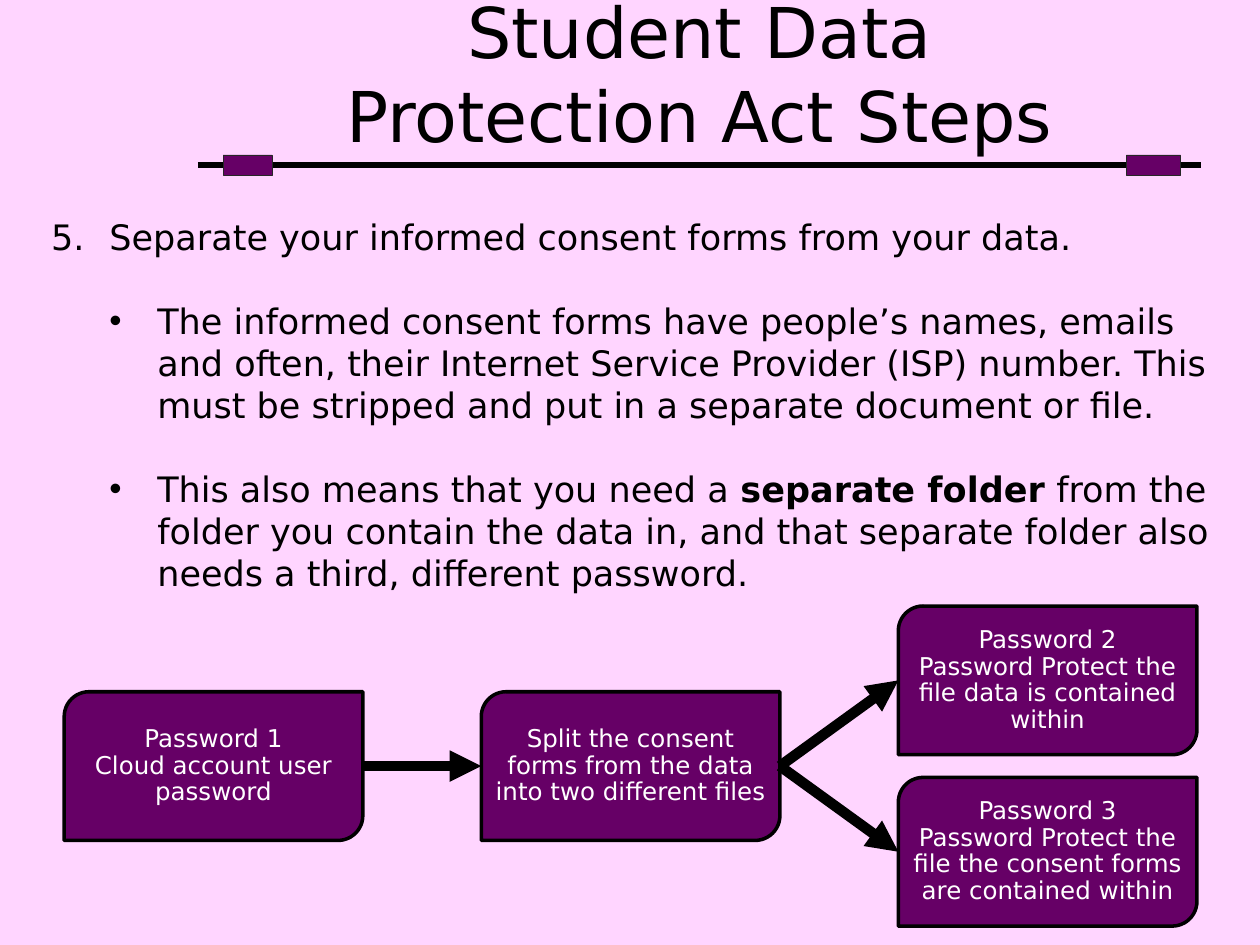
from lxml import etree
from pptx import Presentation
from pptx.dml.color import RGBColor
from pptx.enum.shapes import MSO_CONNECTOR as CONNECTOR, MSO_SHAPE as SHAPE
from pptx.enum.text import MSO_ANCHOR as ANCHOR, MSO_AUTO_SIZE as AUTO_SIZE, PP_ALIGN as ALIGN
from pptx.oxml.ns import qn
from pptx.util import Inches, Pt

PINK = RGBColor(0xFF, 0xD5, 0xFF)
PURPLE = RGBColor(0x66, 0x00, 0x66)
BLACK = RGBColor(0x00, 0x00, 0x00)
DARK_GRAY = RGBColor(0x26, 0x26, 0x26)
WHITE = RGBColor(0xFF, 0xFF, 0xFF)

BOX_WIDTH, BOX_HEIGHT = 2.37, 1.18
COLUMN_STEP = 3.31
FIRST_LEFT, MIDDLE_TOP = 0.51, 5.49
BRANCH_OFFSET = 0.68
BULLET_INDENT = 0.38

BODY = [
    (False, [("Separate your informed consent forms from your data.", False)]),
    (True, [("The informed consent forms have people’s names, emails and often, "
             "their Internet Service Provider (ISP) number. This must be stripped "
             "and put in a separate document or file.", False)]),
    (True, [("This also means that you need a ", False),
            ("separate folder", True),
            (" from the folder you contain the data in, and that separate folder "
             "also needs a third, different password.", False)]),
]

# Column, offset from the middle row, lines of text
STEPS = {
    "login": (0, 0, ["Password 1", "Cloud account user password"]),
    "split": (1, 0, ["Split the consent forms from the data into two different files"]),
    "data": (2, -BRANCH_OFFSET,
             ["Password 2", "Password Protect the file data is contained within"]),
    "consent": (2, BRANCH_OFFSET,
                ["Password 3", "Password Protect the file the consent forms are contained within"]),
}
ARROWS = [("login", "split"), ("split", "data"), ("split", "consent")]


def set_attributes(target, values):
    for name, value in values.items():
        setattr(target, name, value)


class SlideBuilder:
    font_name = "DejaVu Sans"

    def __init__(self, presentation):
        self.slide = presentation.slides.add_slide(presentation.slide_layouts[5])
        self.slide.background.fill.solid()
        self.slide.background.fill.fore_color.rgb = PINK

    def run(self, paragraph, text, size, color=BLACK, bold=False):
        run = paragraph.add_run()
        run.text = text
        set_attributes(run.font, {"name": self.font_name, "size": Pt(size), "bold": bold})
        run.font.color.rgb = color

    def title(self, text, left, top, width, height):
        title = self.slide.shapes.title
        set_attributes(title, {"left": Inches(left), "top": Inches(top),
                               "width": Inches(width), "height": Inches(height)})
        set_attributes(title.text_frame, {"word_wrap": True, "auto_size": AUTO_SIZE.NONE,
                                          "vertical_anchor": ANCHOR.TOP})
        paragraph = title.text_frame.paragraphs[0]
        paragraph.alignment = ALIGN.CENTER
        self.run(paragraph, text, 40)

    def text_box(self, paragraphs, left, top, width, height, align=ALIGN.LEFT):
        """Add 20 pt paragraphs, each given as (bulleted, [(text, bold), ...])."""
        box = self.slide.shapes.add_textbox(*map(Inches, (left, top, width, height)))
        frame = box.text_frame
        frame.word_wrap = True
        for index, (bulleted, runs) in enumerate(paragraphs):
            paragraph = frame.add_paragraph() if index else frame.paragraphs[0]
            paragraph.alignment = align
            if index:
                paragraph.space_before = Pt(24)
            if bulleted:
                self.bullet(paragraph)
            for text, bold in runs:
                self.run(paragraph, text, 20, bold=bold)

    def bullet(self, paragraph):
        properties = paragraph._p.get_or_add_pPr()
        properties.set("marL", str(Inches(BULLET_INDENT)))
        properties.set("indent", str(-Inches(BULLET_INDENT)))
        etree.SubElement(properties, qn("a:buFont"), typeface="Arial")
        etree.SubElement(properties, qn("a:buChar"), char="•")

    def shape(self, kind, left, top, width, height, line_color, line_width):
        shape = self.slide.shapes.add_shape(kind, *map(Inches, (left, top, width, height)))
        shape.shadow.inherit = False
        shape.fill.solid()
        shape.fill.fore_color.rgb = PURPLE
        shape.line.color.rgb = line_color
        shape.line.width = Pt(line_width)
        return shape

    def step(self, lines, left, top):
        shape = self.shape(SHAPE.ROUND_2_DIAG_RECTANGLE, left, top,
                           BOX_WIDTH, BOX_HEIGHT, BLACK, 2)
        frame = shape.text_frame
        margins = {f"margin_{side}": Inches(0.01) for side in ("left", "right", "top", "bottom")}
        set_attributes(frame, {"word_wrap": True, "vertical_anchor": ANCHOR.MIDDLE, **margins})
        for index, text in enumerate(lines):
            paragraph = frame.add_paragraph() if index else frame.paragraphs[0]
            set_attributes(paragraph, {"alignment": ALIGN.CENTER, "line_spacing": 0.9})
            self.run(paragraph, text, 14, WHITE)

    def line(self, start, end, width, arrow=False):
        connector = self.slide.shapes.add_connector(
            CONNECTOR.STRAIGHT, *map(Inches, (*start, *end)))
        connector.line.color.rgb = BLACK
        connector.line.width = Pt(width)
        if arrow:
            etree.SubElement(connector.line._get_or_add_ln(), qn("a:tailEnd"), type="triangle")
        etree.SubElement(connector._element.spPr, qn("a:effectLst"))


def main():
    presentation = Presentation()
    presentation.slide_width, presentation.slide_height = Inches(10), Inches(7.5)
    builder = SlideBuilder(presentation)

    builder.title("Student Data Protection Act Steps", 2.44, -0.14, 6.22, 1.45)
    builder.line((1.57, 1.31), (9.53, 1.31), 3.25)
    for left, width in ((1.77, 0.39), (8.94, 0.43)):
        builder.shape(SHAPE.RECTANGLE, left, 1.23, width, 0.16, DARK_GRAY, 0.25)

    builder.text_box(BODY, 0.77, 1.66, 9.19, 3.8)
    builder.text_box([(False, [("5.", False)])], 0.1, 1.66, 0.67, 0.43, ALIGN.RIGHT)

    corners = {}
    for name, (column, offset, lines) in STEPS.items():
        corners[name] = FIRST_LEFT + column * COLUMN_STEP, MIDDLE_TOP + offset
        builder.step(lines, *corners[name])
    for source, target in ARROWS:
        (source_left, source_top), (target_left, target_top) = corners[source], corners[target]
        builder.line((source_left + BOX_WIDTH, source_top + BOX_HEIGHT / 2),
                     (target_left, target_top + BOX_HEIGHT / 2), 6, arrow=True)

    presentation.save("out.pptx")


if __name__ == "__main__":
    main()
